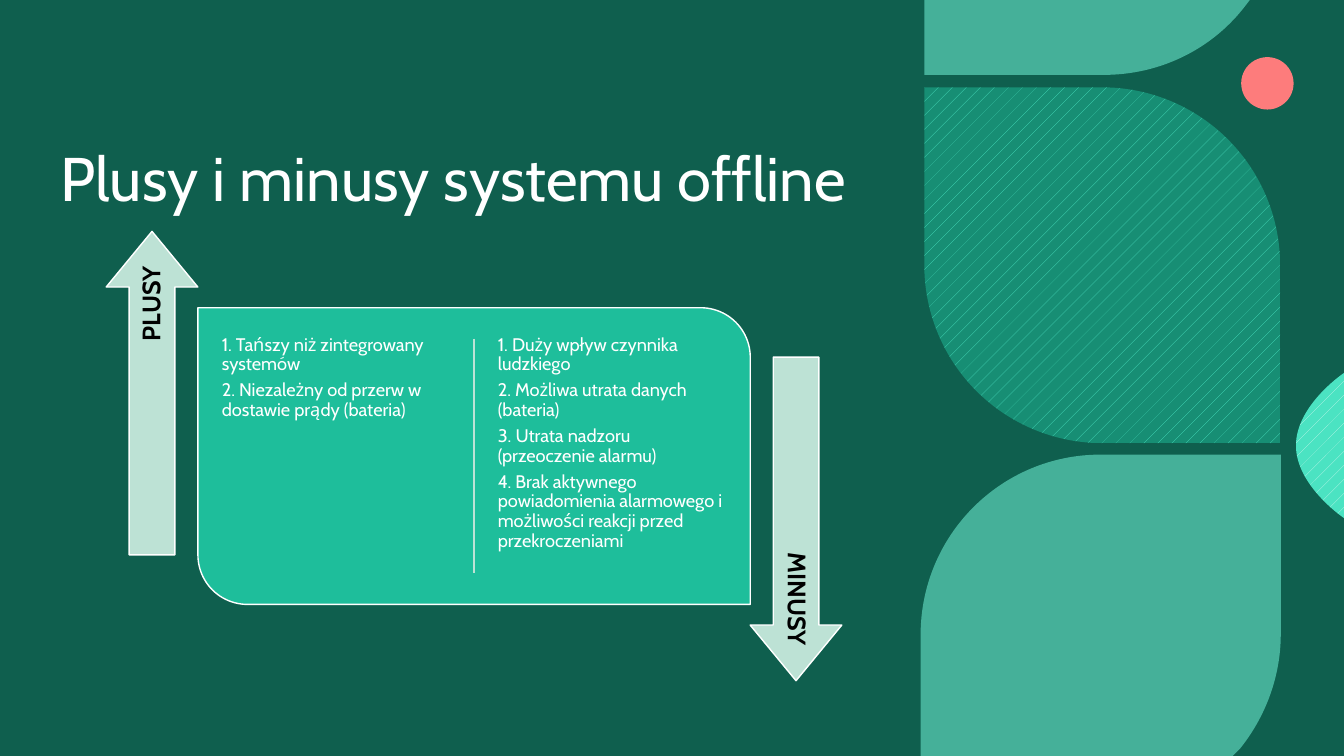
from dataclasses import dataclass

from pptx import Presentation
from pptx.dml.color import RGBColor
from pptx.enum.dml import MSO_PATTERN as PATTERN
from pptx.enum.shapes import MSO_CONNECTOR as CONN, MSO_SHAPE as SHAPE
from pptx.enum.text import MSO_ANCHOR as ANCHOR, MSO_AUTO_SIZE as AUTO, PP_ALIGN as ALIGN
from pptx.oxml.ns import qn
from pptx.util import Inches, Pt
from lxml.etree import SubElement

COLS, ROWS = 80, 45


@dataclass(frozen=True)
class Theme:
    font: str = "Cabin"
    title: int = 44
    label: int = 18
    body: int = 13
    night: str = "09392F"
    green: str = "18997E"
    mint: str = "69E7CC"
    coral: str = "FD7C7C"
    petal: str = "178E74"
    aqua: str = "4BE3C2"
    pale: str = "C3F6EB"
    card: str = "1EBE9B"
    arrow: str = "BDE2D5"
    white: str = "FFFFFF"
    black: str = "000000"


def write(p, text, font, size, color, bold=False, align=ALIGN.LEFT, after=0.0):
    """Fill one paragraph with formatted text."""
    pPr = p._p.get_or_add_pPr()
    pPr.set("marL", "0")
    pPr.set("indent", "0")
    SubElement(pPr, qn("a:buNone"))
    p.alignment, p.line_spacing = align, 0.9
    p.space_before, p.space_after = Pt(0), Pt(after)
    r = p.add_run()
    r.text = text
    r.font.name, r.font.size, r.font.bold = font, Pt(size), bold
    r.font.color.rgb = RGBColor.from_string(color)


class Deck:
    """Holds the theme and the current slide; lengths are columns and rows."""

    def __init__(self, prs, theme):
        self.theme = theme
        self.s = prs.slides.add_slide(prs.slide_layouts[3])
        self.cw, self.rh = prs.slide_width / COLS, prs.slide_height / ROWS
        bg = self.s.background.fill
        bg.solid()
        bg.fore_color.rgb = RGBColor.from_string(theme.night)

    def at(self, x, y):
        return round(x * self.cw), round(y * self.rh)

    def style(self, sp, fill, alpha=None, back=None, line=None):
        sp.shadow.inherit = False
        if back:
            sp.fill.patterned()
            sp.fill.pattern = PATTERN.PERCENT_5
            sp.fill.back_color.rgb = RGBColor.from_string(back)
        else:
            sp.fill.solid()
        sp.fill.fore_color.rgb = RGBColor.from_string(fill)
        if alpha:
            clr = sp._element.spPr.find(qn("a:solidFill"))[0]
            SubElement(clr, qn("a:alpha")).set("val", str(alpha * 1000))
        if line:
            sp.line.color.rgb = RGBColor.from_string(line)
            sp.line.width = Pt(1)
        else:
            sp.line.fill.background()

    def shape(self, kind, x, y, w, h, fill, adj=(), rot=0, **fmt):
        sp = self.s.shapes.add_shape(kind, *self.at(x, y), *self.at(w, h))
        for i, value in enumerate(adj):
            sp.adjustments[i] = value
        sp.rotation = rot
        self.style(sp, fill, **fmt)

    def outline(self, start, steps, fill, **fmt):
        """Closed outline; a step is one point, or three points of a cubic curve."""
        steps = [step if len(step) == 3 else (step,) for step in steps]
        fb = self.s.shapes.build_freeform(*self.at(*start))
        fb.add_line_segments([self.at(*pt) for step in steps for pt in step], close=True)
        sp = fb.convert_to_shape()
        nodes = iter(list(sp._element.iter(qn("a:lnTo"))))
        for step in steps:
            head, *more = [next(nodes) for _ in step]
            if more:
                curve = head.makeelement(qn("a:cubicBezTo"))
                head.addprevious(curve)
                for node in (head, *more):
                    curve.append(node[0])
                    node.getparent().remove(node)
        self.style(sp, fill, **fmt)

    def line(self, x1, y1, x2, y2, color):
        c = self.s.shapes.add_connector(CONN.STRAIGHT, *self.at(x1, y1), *self.at(x2, y2))
        c.line.color.rgb = RGBColor.from_string(color)
        c.line.width = Pt(1)
        SubElement(c._element.spPr, qn("a:effectLst"))

    def fill_text(self, sp, lines, anchor, inset, **fmt):
        tf = sp.text_frame
        tf.word_wrap, tf.auto_size, tf.vertical_anchor = True, AUTO.NONE, anchor
        tf.margin_left = tf.margin_right = Inches(inset[0])
        tf.margin_top = tf.margin_bottom = Inches(inset[1])
        for i, text in enumerate(lines):
            p = tf.add_paragraph() if i else tf.paragraphs[0]
            write(p, text, self.theme.font, **fmt)

    def placeholder(self, idx, x, y, w, h, lines, anchor=ANCHOR.TOP,
                    inset=(0.05, 0.05), **fmt):
        sp = self.s.placeholders[idx]
        sp.left, sp.top = self.at(x, y)
        sp.width, sp.height = self.at(w, h)
        self.s.shapes._spTree.append(sp._element)  # bring to front
        self.fill_text(sp, lines, anchor, inset, color=self.theme.white, **fmt)

    def arrow(self, cx, cy, text, up):
        """Vertical arrow centred on (cx, cy), its label set back from the tip."""
        th, rot = self.theme, 270 if up else 90
        w, h = 19.26, 5.46
        self.shape(SHAPE.RIGHT_ARROW, cx - w / 2, cy - h / 2, w, h, th.arrow,
                   adj=(0.498, 0.607), rot=rot, line=th.white)
        w, h = 17.64, 2.7
        cy += 0.84 if up else -0.84
        sp = self.s.shapes.add_textbox(*self.at(cx - w / 2, cy - h / 2), *self.at(w, h))
        sp.rotation = rot
        self.fill_text(sp, [text], ANCHOR.MIDDLE, (0.07, 0.07), size=th.label,
                       color=th.black, bold=True, align=ALIGN.RIGHT)


PLUSES = ["1. Tańszy niż zintegrowany systemów",
          "2. Niezależny od przerw w dostawie prądy (bateria)"]
MINUSES = ["1. Duży wpływ czynnika ludzkiego",
           "2. Możliwa utrata danych (bateria)",
           "3. Utrata nadzoru (przeoczenie alarmu)",
           "4. Brak aktywnego powiadomienia alarmowego i  możliwości reakcji przed przekroczeniami"]


def main():
    prs = Presentation()
    prs.slide_width, prs.slide_height = Inches(13.333), Inches(7.5)
    th = Theme()
    deck = Deck(prs, th)

    # Backdrop and decorative petals
    deck.shape(SHAPE.RECTANGLE, 0, 0, COLS, ROWS, th.green, alpha=40)
    deck.shape(SHAPE.OVAL, 73.88, 3.4, 3.12, 3.12, th.coral)
    deck.outline((55.02, 0),
                 [(74.4, 0), (73.98, 0.54),
                  ((72.06, 2.94), (69.06, 4.46), (65.7, 4.46)), (55.02, 4.46)],
                 th.mint, alpha=60)
    deck.outline((65.52, 27.06),
                 [(76.24, 27.06), (76.24, 37.74),
                  ((76.24, 40.32), (75.3, 42.72), (73.8, 44.58)),
                  (73.38, ROWS), (54.8, ROWS), (54.8, 37.8),
                  ((54.8, 31.86), (59.58, 27.06), (65.52, 27.06))],
                 th.mint, alpha=60)
    deck.outline((COLS, 22.2),
                 [(COLS, 30.84),
                  ((COLS, 30.84), (77.14, 28.92), (77.14, 26.52)),
                  ((77.14, 24.12), (COLS, 22.2), (COLS, 22.2))],
                 th.pale, back=th.aqua)
    deck.shape(SHAPE.ROUND_2_DIAG_RECTANGLE, 55.02, 5.2, 21.18, 21.18, th.aqua,
               adj=(0, 0.5), back=th.petal)

    # Title
    deck.placeholder(0, 3, 4.38, 50.4, 8.7, ["Plusy i minusy systemu offline"],
                     anchor=ANCHOR.BOTTOM, inset=(0.1, 0.05), size=th.title)

    # Card with the two lists
    deck.shape(SHAPE.ROUND_2_DIAG_RECTANGLE, 11.78, 18.32, 32.88, 17.66, th.card,
               adj=(0, 0.167), line=th.white)
    deck.line(28.22, 20.16, 28.22, 34.08, th.arrow)
    for idx, x, lines in ((1, 12.9, PLUSES), (2, 29.33, MINUSES)):
        deck.placeholder(idx, x, 19.67, 14.22, 15, lines, size=th.body, after=4.5)

    # Arrows on both sides
    deck.arrow(9.05, 23.4, "PLUSY", up=True)
    deck.arrow(47.38, 30.89, "MINUSY", up=False)

    prs.save("out.pptx")


if __name__ == "__main__":
    main()
